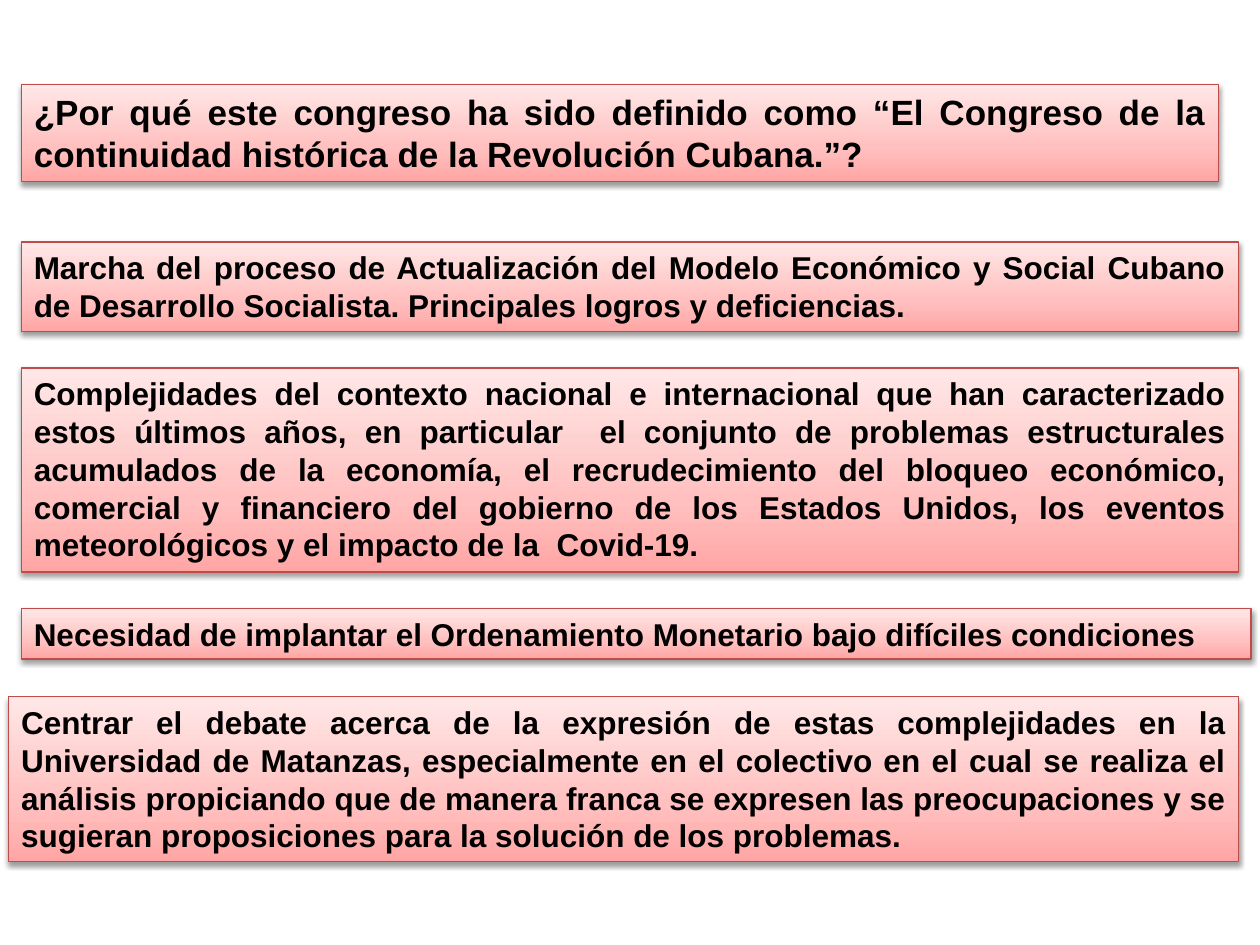
from lxml import etree
from pptx import Presentation
from pptx.dml.color import RGBColor as RGB
from pptx.enum.shapes import MSO_SHAPE as SHAPE
from pptx.enum.text import MSO_ANCHOR as ANCHOR, MSO_AUTO_SIZE as AUTO, PP_ALIGN as ALIGN
from pptx.oxml.ns import qn
from pptx.util import Inches, Pt

COLORS = {"deep": "FFA6A5", "mid": "FFC0BF", "pale": "FFE7E7",
          "line": "BF4C48", "text": "000000", "shadow": "000000"}
STOPS = [(0, "deep"), (35, "mid"), (100, "pale")]


def add_color(parent, name):
    return etree.SubElement(parent, qn("a:srgbClr"), val=COLORS[name])


prs = Presentation()
prs.slide_width, prs.slide_height = Inches(10), Inches(7.5)
slide = prs.slides.add_slide(prs.slide_layouts[6])
col, row = prs.slide_width / 100, prs.slide_height / 75

LEFT, RIGHT = 1.7, 98.3
boxes = [
    (LEFT, 6.7, 96.7, 7.7, 20,
     "¿Por qué este congreso ha sido definido como “El Congreso de la "
     "continuidad histórica de la Revolución Cubana.”?"),
    (LEFT, 19.2, RIGHT, 7.1, 18,
     "Marcha del proceso de Actualización del Modelo Económico y Social Cubano "
     "de Desarrollo Socialista. Principales logros y deficiencias."),
    (LEFT, 29.2, RIGHT, 16.2, 18,
     "Complejidades del contexto nacional e internacional que han caracterizado "
     "estos últimos años, en particular  el conjunto de problemas estructurales "
     "acumulados de la economía, el recrudecimiento del bloqueo económico, "
     "comercial y financiero del gobierno de los Estados Unidos, los eventos "
     "meteorológicos y el impacto de la  Covid-19."),
    (LEFT, 48.3, 99.3, 4, 18,
     "Necesidad de implantar el Ordenamiento Monetario bajo difíciles condiciones"),
    (0.7, 55.3, RIGHT, 13.1, 18,
     "Centrar el debate acerca de la expresión de estas complejidades en la "
     "Universidad de Matanzas, especialmente en el colectivo en el cual se realiza el "
     "análisis propiciando que de manera franca se expresen las preocupaciones y se "
     "sugieran proposiciones para la solución de los problemas."),
]

for left, top, right, height, size, text in boxes:
    sp = slide.shapes.add_shape(SHAPE.RECTANGLE, int(left * col), int(top * row),
                                int((right - left) * col), int(height * row))
    sp.line.color.rgb = RGB.from_string(COLORS["line"])
    sp.line.width = Pt(0.75)

    sp.fill.gradient()
    grad = sp._element.spPr.find(qn("a:gradFill"))
    grad.find(qn("a:lin")).set("ang", str(270 * 60000))
    stops = grad.find(qn("a:gsLst"))
    for old in list(stops):
        stops.remove(old)
    for pos, name in STOPS:
        add_color(etree.SubElement(stops, qn("a:gs"), pos=str(pos * 1000)), name)

    sp.shadow.inherit = False
    effects = sp._element.spPr.find(qn("a:effectLst"))
    shadow = etree.SubElement(effects, qn("a:outerShdw"), blurRad=str(Pt(3.1)),
                              dist=str(Pt(1.6)), dir=str(90 * 60000), rotWithShape="0")
    etree.SubElement(add_color(shadow, "shadow"), qn("a:alpha"), val="38000")

    tf = sp.text_frame
    tf.word_wrap = True
    tf.auto_size = AUTO.SHAPE_TO_FIT_TEXT
    tf.vertical_anchor = ANCHOR.TOP
    p = tf.paragraphs[0]
    p.alignment = ALIGN.JUSTIFY
    r = p.add_run()
    r.text = text
    r.font.name, r.font.size, r.font.bold = "Arial", Pt(size), True
    r.font.color.rgb = RGB.from_string(COLORS["text"])

prs.save("out.pptx")
